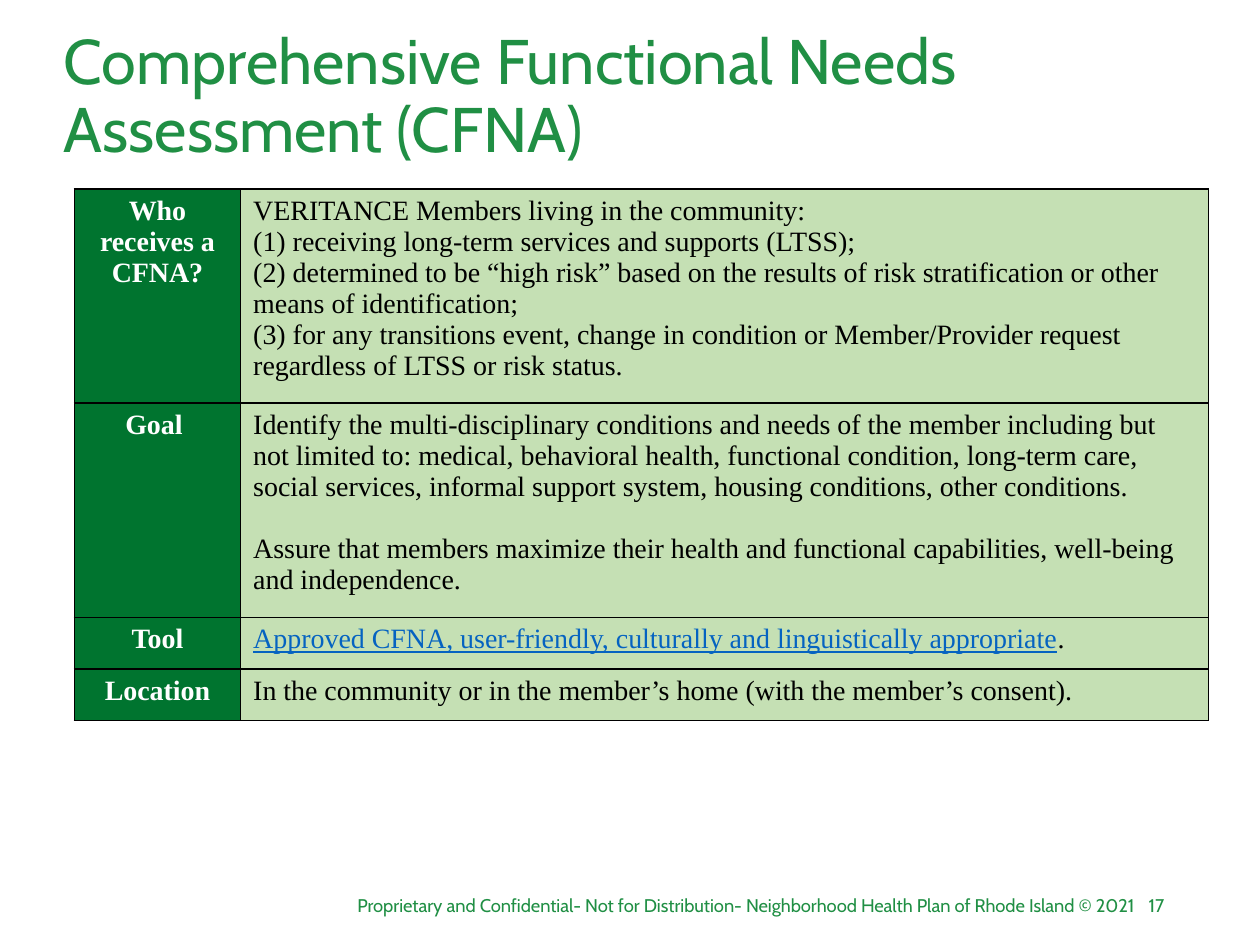
from lxml import etree
from pptx import Presentation
from pptx import util as u
from pptx.dml import color
from pptx.enum import text
from pptx.oxml import ns

WIDTH, HEIGHT = u.Inches(10), u.Inches(7.5)
GREEN, DARK, PALE = "208F44", "00742F", "C5E0B4"
WHITE, BLACK, BLUE = "FFFFFF", "000000", "0563C1"
SANS, SERIF = "Cabin", "Times New Roman"
TITLE = "Comprehensive Functional Needs Assessment (CFNA)"
FOOTER = ("Proprietary and Confidential- Not for Distribution- "
          "Neighborhood Health Plan of Rhode Island © 2021")
LINK = "Approved CFNA, user-friendly, culturally and linguistically appropriate"
ROWS = [
    ("Who receives a CFNA?", 1.7, 0, [
        "VERITANCE Members living in the community:",
        "(1) receiving long-term services and supports (LTSS);",
        "(2) determined to be “high risk” based on the results of risk "
        "stratification or other means of identification;",
        "(3) for any transitions event, change in condition or Member/Provider "
        "request regardless of LTSS or risk status."]),
    ("Goal ", 1.7, 17.7, [
        "Identify the multi-disciplinary conditions and needs of the member "
        "including but not limited to: medical, behavioral health, functional "
        "condition, long-term care, social services, informal support system, "
        "housing conditions, other conditions.",
        "Assure that members maximize their health and functional capabilities, "
        "well-being and independence."]),
    ("Tool", 0.41, 0, [LINK + "."]),
    ("Location", 0.41, 0, [
        "In the community or in the member’s home (with the member’s consent)."]),
]


def rgb(code):
    """Turn a hex string into a colour."""
    return color.RGBColor.from_string(code)


def area(left, top, width, height):
    """Turn shares of the slide into a box."""
    return (int(left * WIDTH), int(top * HEIGHT),
            int(width * WIDTH), int(height * HEIGHT))


def add_span(para, words, face, size, code, bold=False, underline=False):
    """Add one styled run to a paragraph."""
    span = para.add_run()
    span.text = words
    font = span.font
    font.name, font.size, font.bold = face, u.Pt(size), bold
    font.underline = underline
    font.color.rgb = rgb(code)


def add_label(page, place, words, size, align, anchor):
    """Place a green line of text in the given box."""
    box = page.shapes.add_textbox(*place)
    frame = box.text_frame
    frame.word_wrap = True
    frame.vertical_anchor = anchor
    para = frame.paragraphs[0]
    para.alignment = align
    add_span(para, words, SANS, size, GREEN)
    return para


def add_title(page, place):
    """Place the slide title."""
    para = add_label(page, place, TITLE, 36, text.PP_ALIGN.LEFT,
                     text.MSO_ANCHOR.MIDDLE)
    para.line_spacing = 0.9


def add_footer(page, place, words):
    """Place one right-aligned footer part."""
    add_label(page, place, words, 10.5, text.PP_ALIGN.RIGHT,
              text.MSO_ANCHOR.TOP)


def paint_cell(cell, code):
    """Give a cell black borders and a plain fill."""
    props = cell._tc.get_or_add_tcPr()
    for side in ("lnL", "lnR", "lnT", "lnB"):
        line = etree.SubElement(props, ns.qn("a:" + side), w=str(u.Pt(1)))
        solid = etree.SubElement(line, ns.qn("a:solidFill"))
        etree.SubElement(solid, ns.qn("a:srgbClr"), val=BLACK)
    cell.fill.solid()
    cell.fill.fore_color.rgb = rgb(code)


def fill_details(cell, lines, gap):
    """Write the detail paragraphs, underlining the link words."""
    frame = cell.text_frame
    for index, words in enumerate(lines):
        para = frame.add_paragraph() if index else frame.paragraphs[0]
        if index and gap:
            para.space_before = u.Pt(gap)
        if words.startswith(LINK):
            add_span(para, LINK, SERIF, 16, BLUE, underline=True)
            words = words[len(LINK):]
        add_span(para, words, SERIF, 16, BLACK)


def add_summary(page, place):
    """Place the assessment table with a heading column."""
    table = page.shapes.add_table(len(ROWS), 2, *place).table
    table.first_row = table.horz_banding = False
    heading_width = u.Inches(1.32)
    table.columns[0].width = heading_width
    table.columns[1].width = place[2] - heading_width
    for index, (heading, height, gap, lines) in enumerate(ROWS):
        table.rows[index].height = u.Inches(height)
        label, details = table.cell(index, 0), table.cell(index, 1)
        paint_cell(label, DARK)
        paint_cell(details, PALE)
        para = label.text_frame.paragraphs[0]
        para.alignment = text.PP_ALIGN.CENTER
        add_span(para, heading, SERIF, 16, WHITE, bold=True)
        fill_details(details, lines, gap)


def main():
    """Build and save the slide."""
    deck = Presentation()
    deck.slide_width, deck.slide_height = WIDTH, HEIGHT
    page = deck.slides.add_slide(deck.slide_layouts[6])
    add_footer(page, area(0.888, 0.94, 0.046, 0.037), "17")
    add_footer(page, area(0.25, 0.94, 0.661, 0.037), FOOTER)
    add_title(page, area(0.041, 0.02, 0.9, 0.167))
    add_summary(page, area(0.059, 0.2, 0.9, 0.56))
    deck.save("out.pptx")


if __name__ == "__main__":
    main()
